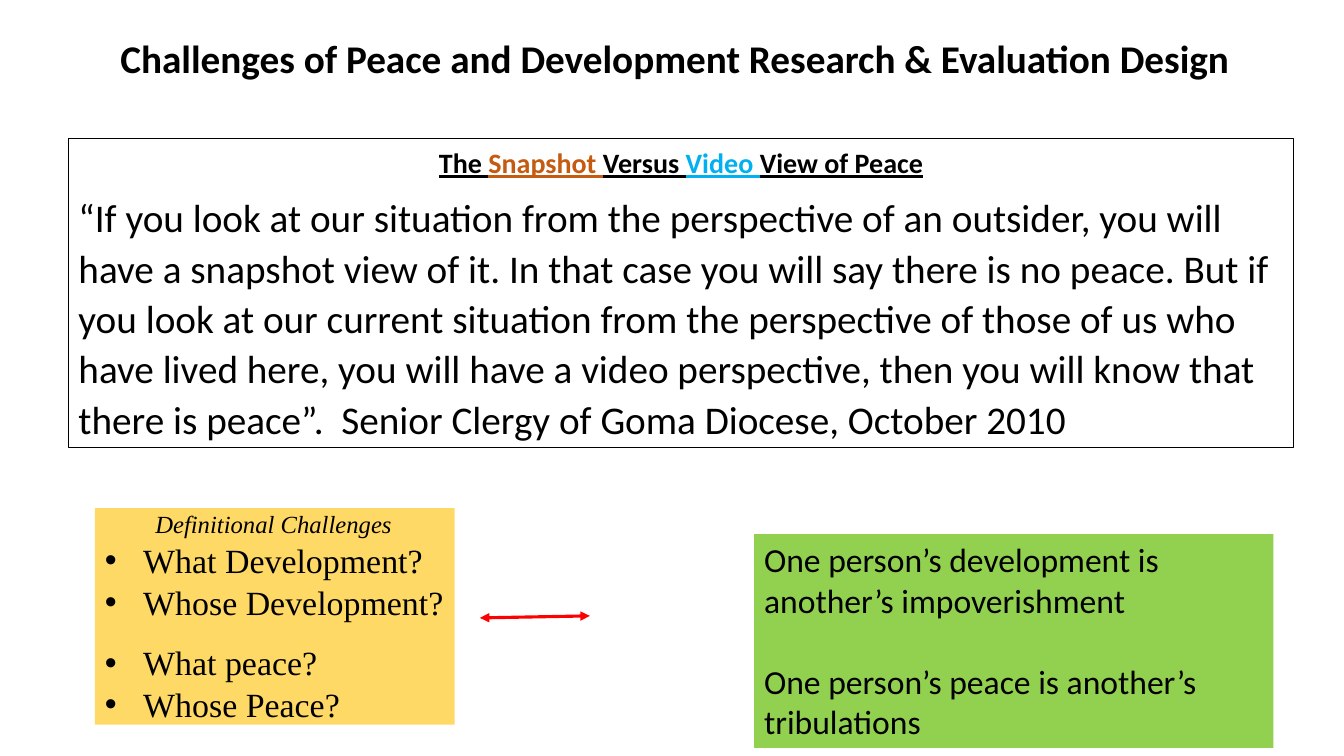
"""Build the slide on challenges of peace and development research."""
from dataclasses import dataclass

from lxml import etree
from pptx import Presentation
from pptx.dml.color import RGBColor
from pptx.enum.shapes import MSO_CONNECTOR
from pptx.enum.text import MSO_ANCHOR, MSO_AUTO_SIZE, PP_ALIGN
from pptx.oxml.ns import qn
from pptx.util import Inches, Pt

LEFT, CENTER = PP_ALIGN.LEFT, PP_ALIGN.CENTER
TOP, MIDDLE = MSO_ANCHOR.TOP, MSO_ANCHOR.MIDDLE
NO_AUTOFIT, GROW = MSO_AUTO_SIZE.NONE, MSO_AUTO_SIZE.SHAPE_TO_FIT_TEXT
STRAIGHT = MSO_CONNECTOR.STRAIGHT

BLACK = RGBColor(0x00, 0x00, 0x00)
WHITE = RGBColor(0xFF, 0xFF, 0xFF)
AMBER = RGBColor(0xFF, 0xD9, 0x66)
GREEN = RGBColor(0x92, 0xD0, 0x50)
RUST = RGBColor(0xC5, 0x5A, 0x11)
SKY = RGBColor(0x00, 0xB0, 0xF0)
RED = RGBColor(0xFF, 0x00, 0x00)

SANS, SERIF = "Calibri", "Times New Roman"
PAIR_GAP = 18


@dataclass(frozen=True)
class Box:
    """Place of an element in inches."""
    left: float
    top: float
    width: float
    height: float


@dataclass(frozen=True)
class Question:
    """Bulleted question with the space before it in points."""
    text: str
    before: float = 4.5


TITLE_BOX = Box(0.94, 0.17, 11.5, 0.87)
DEFINITIONS_BOX = Box(0.94, 5.04, 3.57, 2.15)
PARADOX_BOX = Box(7.48, 5.3, 5.15, 2.12)
QUOTE_BOX = Box(0.68, 1.37, 12.15, 3.07)

QUESTIONS = (
    Question("What Development?"),
    Question("Whose Development?"),
    Question("What peace?", PAIR_GAP),
    Question("Whose Peace?"),
)
PARADOXES = (
    "One person’s development is another’s impoverishment",
    "One person’s peace is another’s tribulations",
)
VIEW_HEADING = (
    ("The ", BLACK),
    ("Snapshot ", RUST),
    ("Versus ", BLACK),
    ("Video ", SKY),
    ("View of Peace", BLACK),
)
QUOTE = (
    "“If you look at our situation from the perspective of an outsider, "
    "you will have a snapshot view of it. In that case you will say there is "
    "no peace. But if you look at our current situation from the perspective "
    "of those of us who have lived here, you will have a video perspective, "
    "then you will know that there is peace”.  Senior Clergy of Goma Diocese, "
    "October 2010"
)


def place(shape, box: Box) -> None:
    """Move and size a shape."""
    shape.left, shape.top = Inches(box.left), Inches(box.top)
    shape.width, shape.height = Inches(box.width), Inches(box.height)


def prepare(shape, anchor=TOP, auto_size=NO_AUTOFIT):
    """Set how the text sits in a shape and return its frame."""
    frame = shape.text_frame
    frame.word_wrap = True
    frame.auto_size = auto_size
    frame.vertical_anchor = anchor
    return frame


def add_panel(slide, box: Box, fill: RGBColor):
    """Add a filled text panel that grows with its text."""
    panel = slide.shapes.add_textbox(0, 0, 0, 0)
    place(panel, box)
    panel.fill.solid()
    panel.fill.fore_color.rgb = fill
    prepare(panel, auto_size=GROW)
    return panel


def write(frame, text, *, size: float, font: str = SANS, align=LEFT,
          bold: bool = False, italic: bool = False, underline: bool = False,
          spacing: float = 1.0, before: float = 0, after: float = 0,
          margin: float = 0, bullet: str = "") -> None:
    """Write one paragraph from a string or from (string, colour) pairs."""
    paragraph = frame.paragraphs[0]
    if paragraph.runs:
        paragraph = frame.add_paragraph()
    paragraph.alignment = align
    paragraph.line_spacing = spacing
    paragraph.space_before, paragraph.space_after = Pt(before), Pt(after)
    properties = paragraph._p.get_or_add_pPr()
    properties.set("marL", str(Inches(margin)))
    properties.set("indent", str(-Inches(margin) if bullet else 0))
    if bullet:
        bullet_font = etree.SubElement(properties, qn("a:buFont"))
        bullet_font.set("typeface", "Arial")
        etree.SubElement(properties, qn("a:buChar")).set("char", bullet)
    else:
        etree.SubElement(properties, qn("a:buNone"))
    for words, color in ((text, BLACK),) if isinstance(text, str) else text:
        run = paragraph.add_run()
        run.text = words
        run.font.name, run.font.size = font, Pt(size)
        run.font.bold, run.font.italic = bold, italic
        run.font.underline = underline
        run.font.color.rgb = color


def add_double_arrow(slide) -> None:
    """Link the definitions to the paradoxes."""
    link = slide.shapes.add_connector(
        STRAIGHT, Inches(4.76), Inches(6.13), Inches(5.85), Inches(6.11))
    link.line.color.rgb = RED
    link.line.width = Pt(2.25)
    outline = link.line._get_or_add_ln()
    for end in ("a:headEnd", "a:tailEnd"):
        etree.SubElement(outline, qn(end)).set("type", "triangle")
    etree.SubElement(link._element.spPr, qn("a:effectLst"))


def main() -> None:
    """Build and save the slide."""
    deck = Presentation()
    deck.slide_width, deck.slide_height = Inches(13.33), Inches(7.5)
    slide = deck.slides.add_slide(deck.slide_layouts[1])

    title = slide.shapes.title
    place(title, TITLE_BOX)
    write(prepare(title, MIDDLE),
          "Challenges of Peace and Development Research & Evaluation Design",
          size=28, bold=True, align=CENTER, spacing=0.9)

    definitions = slide.placeholders[1]
    place(definitions, DEFINITIONS_BOX)
    definitions.fill.solid()
    definitions.fill.fore_color.rgb = AMBER
    definitions_text = prepare(definitions)
    write(definitions_text, "Definitional Challenges", size=17.6, font=SERIF,
          italic=True, spacing=0.87, margin=0.5)
    for question in QUESTIONS:
        write(definitions_text, question.text, size=24.2, font=SERIF,
              spacing=0.87, before=question.before, margin=0.38, bullet="•")

    paradox_panel = add_panel(slide, PARADOX_BOX, GREEN)
    for number, paradox in enumerate(PARADOXES):
        write(paradox_panel.text_frame, paradox, size=24, before=29.3 * number)

    quote_panel = add_panel(slide, QUOTE_BOX, WHITE)
    quote_panel.line.color.rgb = BLACK
    quote_panel.line.width = Pt(0.75)
    write(quote_panel.text_frame, VIEW_HEADING, size=20, bold=True,
          underline=True, align=CENTER, spacing=1.07, after=8)
    write(quote_panel.text_frame, QUOTE, size=28, spacing=1.07, after=8)

    add_double_arrow(slide)
    deck.save("out.pptx")


if __name__ == "__main__":
    main()
